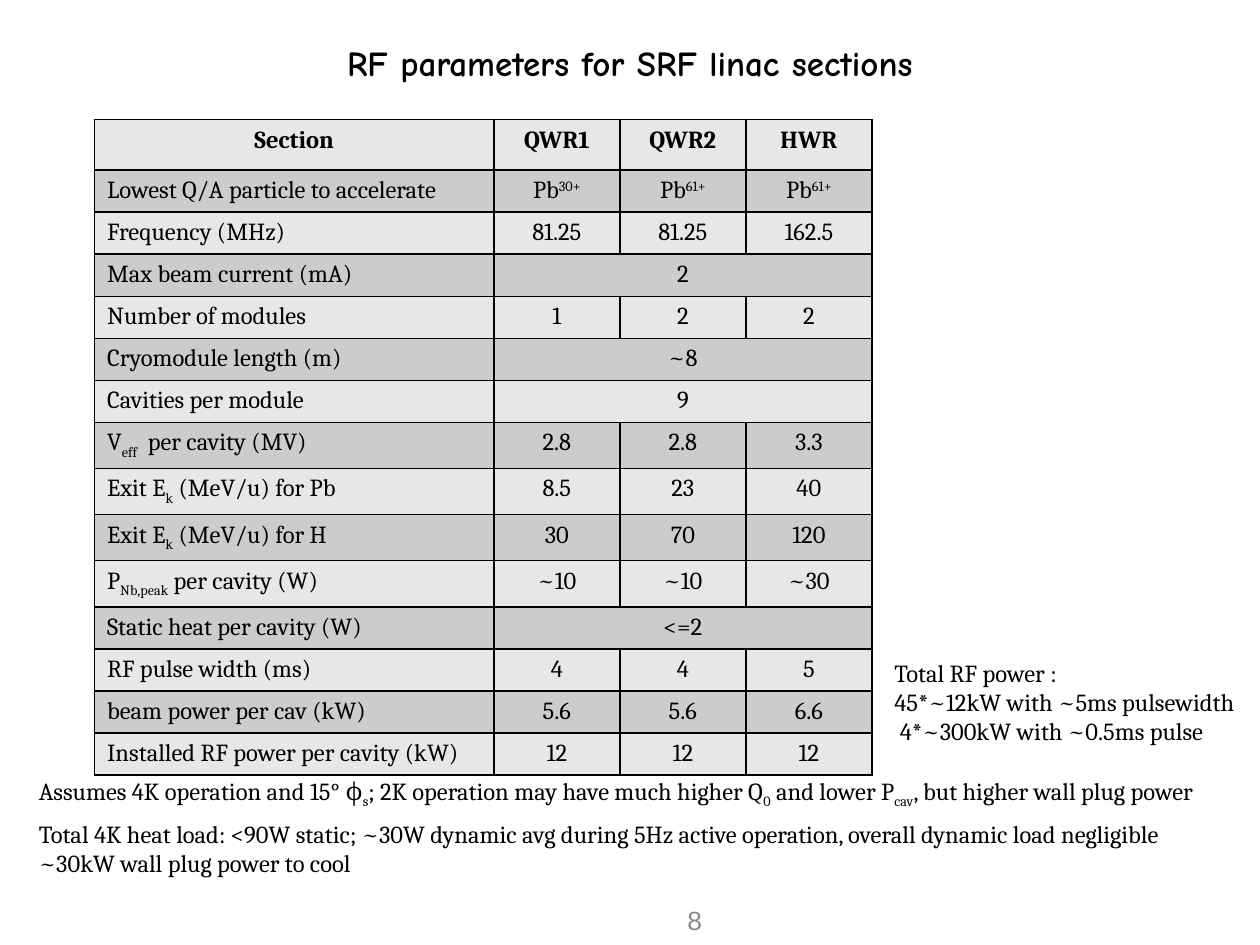
from lxml import etree
from pptx import Presentation
from pptx import util as u
from pptx.dml.color import RGBColor
from pptx.enum import text
from pptx.oxml import ns

ROWS = [
    ["Section", "QWR1", "QWR2", "HWR"],
    ["Lowest Q/A particle to accelerate", "Pb|^30+", "Pb|^61+", "Pb|^61+"],
    ["Frequency (MHz)", "81.25", "81.25", "162.5"],
    ["Max beam current (mA)", "2"],
    ["Number of modules", "1", "2", "2"],
    ["Cryomodule length (m)", "~8"],
    ["Cavities per module", "9"],
    ["V|_eff|  per cavity (MV)", "2.8", "2.8", "3.3"],
    ["Exit E|_k| (MeV/u) for Pb", "8.5", "23", "40"],
    ["Exit E|_k| (MeV/u) for H", "30", "70", "120"],
    ["P|_Nb,peak| per cavity (W)", "~10", "~10", "~30"],
    ["Static heat per cavity (W)", "<=2"],
    ["RF pulse width (ms)", "4", "4", "5"],
    ["beam power per cav (kW)", "5.6", "5.6", "6.6"],
    ["Installed RF power per cavity (kW)", "12", "12", "12"],
]
LEFT, CENTER, RIGHT = text.PP_ALIGN.LEFT, text.PP_ALIGN.CENTER, text.PP_ALIGN.RIGHT
MIDDLE = text.MSO_ANCHOR.MIDDLE


def rgb(value):
    return RGBColor.from_string(value)


class Deck:
    """Holds the style and current slide; lengths are cells of a 100 by 75 grid."""

    font, size, ink = "Cambria", 14, "000000"
    bands = "E7E7E7", "CCCCCC"

    def __init__(self):
        self.prs = Presentation()
        self.prs.slide_width, self.prs.slide_height = u.Inches(10), u.Inches(7.5)
        self.unit = self.prs.slide_width / 100
        self.s = self.prs.slides.add_slide(self.prs.slide_layouts[5])

    def grid(self, *cells):
        return [round(c * self.unit) for c in cells]

    def add_lines(self, tf, lines, align=LEFT, font=None, size=None, color=None, bold=False):
        for i, line in enumerate(lines):
            p = tf.add_paragraph() if i else tf.paragraphs[0]
            p.alignment = align
            for part in line.split("|"):
                r = p.add_run()
                r.text = part.lstrip("^_")
                f = r.font
                f.name, f.size, f.bold = font or self.font, u.Pt(size or self.size), bold
                f.color.rgb = rgb(color or self.ink)
                if part[0] in "^_":
                    r._r.get_or_add_rPr().set("baseline", "30000" if part[0] == "^" else "-25000")

    def title(self, line, box):
        sp = self.s.shapes.title
        sp.left, sp.top, sp.width, sp.height = self.grid(*box)
        sp.text_frame.vertical_anchor = MIDDLE
        self.add_lines(sp.text_frame, [line], CENTER, "Comic Neue", 20, bold=True)

    def box(self, lines, box, wrap=True, anchor=text.MSO_ANCHOR.TOP, **style):
        tf = self.s.shapes.add_textbox(*self.grid(*box)).text_frame
        tf.word_wrap, tf.vertical_anchor = wrap, anchor
        self.add_lines(tf, lines, **style)

    def border(self, cell):
        pr = cell._tc.get_or_add_tcPr()
        for side in "LRTB":
            ln = etree.SubElement(pr, ns.qn(f"a:ln{side}"), w=str(int(u.Pt(1))))
            fill = etree.SubElement(ln, ns.qn("a:solidFill"))
            etree.SubElement(fill, ns.qn("a:srgbClr"), val=self.ink)

    def table(self, rows, box, widths):
        shape = self.s.shapes.add_table(len(rows), len(widths), *self.grid(*box))
        tb = shape.table
        for col, width in zip(tb.columns, self.grid(*widths)):
            col.width = width
        for i, row in enumerate(rows):
            height = 4 if i == 0 else 3.53 if "_" in row[0] else 3.24
            tb.rows[i].height = self.grid(height)[0]
            for j in range(len(widths)):
                cell = tb.cell(i, j)
                self.border(cell)
                cell.fill.solid()
                cell.fill.fore_color.rgb = rgb(self.bands[i % 2])
                if j < len(row):
                    align = CENTER if i == 0 or j else LEFT
                    self.add_lines(cell.text_frame, [row[j]], align, bold=i == 0)
            if len(row) == 2:
                tb.cell(i, 1).merge(tb.cell(i, len(widths) - 1))


def main():
    d = Deck()
    d.title("RF parameters for SRF linac sections", (7.5, 0, 85, 10))
    d.box(["8"], (49.2, 71, 7.5, 4), anchor=MIDDLE, align=RIGHT,
          font="Arial", size=15, color="898989")
    d.table(ROWS, (7.5, 9.5, 61.7, 50.7), (31.7, 10, 10, 10))
    d.box(["Assumes 4K operation and 15° ϕ|_s|; 2K operation may have much higher Q|_0"
           "| and lower P|_cav|, but higher wall plug power"],
          (2.1, 61.1, 94.7, 3.4), wrap=False)
    d.box(["Total 4K heat load: <90W static; ~30W dynamic avg during 5Hz active operation, "
           "overall dynamic load negligible", "~30kW wall plug power to cool"],
          (2.1, 64.5, 92, 5.7), wrap=False)
    d.box(["Total RF power :", "45*~12kW with ~5ms pulsewidth",
           " 4*~300kW with ~0.5ms pulse"], (70, 51.7, 29.2, 8.1))
    d.prs.save("out.pptx")


if __name__ == "__main__":
    main()
